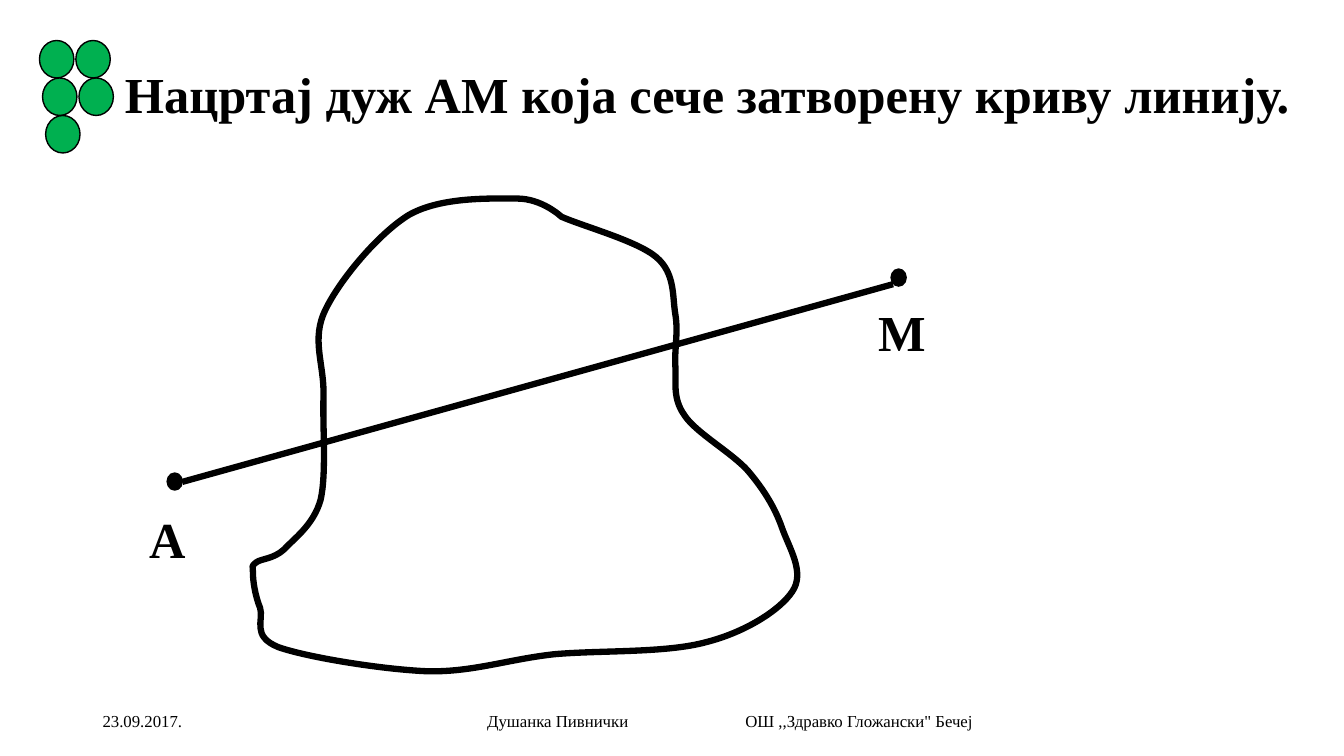
"""Build a geometry exercise slide: segment AM crossing a closed curve."""
from dataclasses import dataclass

from lxml.etree import SubElement
from pptx import Presentation
from pptx.dml.color import RGBColor
from pptx.enum.shapes import MSO_CONNECTOR, MSO_SHAPE
from pptx.enum.text import MSO_ANCHOR
from pptx.oxml.ns import qn
from pptx.util import Pt


@dataclass(frozen=True)
class Theme:
    font: str = "Times New Roman"
    ink: RGBColor = RGBColor(0, 0, 0)
    paper: RGBColor = RGBColor(255, 255, 255)
    green: RGBColor = RGBColor(0, 176, 80)
    large: int = 36
    small: int = 12
    thin: float = 1
    thick: float = 4.5


THEME = Theme()
SLIDE_SIZE = (960, 540)
TITLE = ("Нацртај дуж АМ која сече затворену криву линију.", (82.2, 17.3, 847.4, 104.7))
DATE = ("23.09.2017.", (66.2, 500.4, 216, 28.8))
FOOTER = ("Душанка Пивнички\tОШ ,,Здравко Гложански\" Бечеј", (318.2, 500.4, 407.5, 28.8))
FOOTER_INSET = 29.8
FOOTER_TAB = 184.4
POINT_LABELS = [("A", (99.5, 364.5, 50.4, 36)), ("М", (620.1, 216.2, 50.4, 36))]
POINT_CORNERS = [(119.4, 337.9), (636.5, 192.2)]
POINT_SIZE = (10.8, 12.2)
SEGMENT = (130.3, 344.2, 637.9, 203)

BALL_ROWS = (2, 2, 1)
BALL_ORIGIN = (28.2, 28.9)
BALL_SIZE = (24.6, 26.8)
BALL_STEP = 26
ROW_SHIFT = 2.2

CURVE_BOX = (180.2, 141.9, 389.5, 337.7)
CURVE_START = (182.9, 401.8)
CURVE_PIECES = [
    ((186.5, 398.9), (195.1, 399.6), (203, 392.4)),
    ((210.2, 384.5), (223.9, 375.1), (229, 357.1)),
    ((233.3, 338.4), (230.4, 305.3), (231.1, 283)),
    ((231.8, 259.9), (221.8, 242.6), (232.6, 221)),
    ((242.6, 200.2), (270, 167), (292.3, 153.4)),
    ((315.4, 140.4), (350.6, 141.8), (369.4, 141.8)),
    ((387.4, 141.8), (401, 154.8), (401, 154.8)),
    ((417.6, 162), (455, 172.1), (468.7, 183.6)),
    ((482.4, 195.1), (480.2, 211.7), (482.4, 224.6)),
    ((484.6, 237.6), (481.7, 249.1), (482.4, 261.4)),
    ((483.1, 272.9), (480.2, 284.4), (488.9, 296.6)),
    ((496.8, 308.9), (522.7, 323.3), (534.2, 336.2)),
    ((545.8, 349.9), (553.7, 362.9), (558.7, 377.3)),
    ((563.8, 391.7), (575.3, 409), (565.9, 422.6)),
    ((557.3, 435.6), (532.8, 451.4), (504.7, 458.6)),
    ((475.9, 466.6), (429.1, 464.4), (396, 467.3)),
    ((362.9, 470.9), (337.7, 480.2), (305.3, 479.5)),
    ((272.2, 478.1), (218.9, 469.4), (198.7, 462.2)),
    ((179.3, 454.3), (188.6, 442.8), (185.8, 434.2)),
    ((182.2, 425.5), (180.7, 414.7), (180.7, 409.7)),
    ((180.7, 403.9), (179.3, 404.6), (182.9, 401.8)),
]


def points(*lengths):
    return [Pt(length) for length in lengths]


def add_text(slide, text, box, size, bold=False, anchor=MSO_ANCHOR.MIDDLE):
    frame = slide.shapes.add_textbox(*points(*box)).text_frame
    frame.word_wrap = True
    frame.vertical_anchor = anchor
    paragraph = frame.paragraphs[0]
    paragraph.text = text
    paragraph.font.name = THEME.font
    paragraph.font.size = Pt(size)
    paragraph.font.bold = bold
    paragraph.font.color.rgb = THEME.ink
    return frame


def add_footer(slide):
    frame = add_text(slide, *FOOTER, THEME.small)
    frame.margin_left = Pt(FOOTER_INSET)
    properties = frame.paragraphs[0]._p.get_or_add_pPr()
    tab_list = properties.makeelement(qn("a:tabLst"))
    SubElement(tab_list, qn("a:tab"), pos=str(Pt(FOOTER_TAB)), algn="l")
    properties.insert(0, tab_list)


def style_shape(shape, fill, width):
    shape.shadow.inherit = False
    shape.fill.solid()
    shape.fill.fore_color.rgb = fill
    shape.line.color.rgb = THEME.ink
    shape.line.width = Pt(width)


def add_ellipse(slide, corner, size, fill):
    shape = slide.shapes.add_shape(MSO_SHAPE.OVAL, *points(*corner, *size))
    style_shape(shape, fill, THEME.thin)


def add_balls(slide):
    left, top = BALL_ORIGIN
    for row, count in enumerate(BALL_ROWS):
        for column in range(count):
            corner = (left + row * ROW_SHIFT + column * BALL_STEP, top + row * BALL_SIZE[1])
            add_ellipse(slide, corner, BALL_SIZE, THEME.green)


def add_curve_point(parent, position):
    x, y = (Pt(value - edge) for value, edge in zip(position, CURVE_BOX))
    SubElement(parent, qn("a:pt"), x=str(x), y=str(y))


def add_closed_curve(slide):
    builder = slide.shapes.build_freeform(*points(*CURVE_START))
    builder.add_line_segments([points(*piece[-1]) for piece in CURVE_PIECES], close=True)
    shape = builder.convert_to_shape()
    shape.left, shape.top, shape.width, shape.height = points(*CURVE_BOX)
    outline = next(shape._element.iter(qn("a:path")))
    for child in list(outline):
        outline.remove(child)
    outline.set("w", str(shape.width))
    outline.set("h", str(shape.height))
    add_curve_point(SubElement(outline, qn("a:moveTo")), CURVE_START)
    for piece in CURVE_PIECES:
        segment = SubElement(outline, qn("a:cubicBezTo"))
        for position in piece:
            add_curve_point(segment, position)
    SubElement(outline, qn("a:close"))
    style_shape(shape, THEME.paper, THEME.thick)


def add_segment(slide):
    connector = slide.shapes.add_connector(MSO_CONNECTOR.STRAIGHT, *points(*SEGMENT))
    connector.line.color.rgb = THEME.ink
    connector.line.width = Pt(THEME.thick)
    SubElement(connector._element.spPr, qn("a:effectLst"))


def main():
    presentation = Presentation()
    presentation.slide_width, presentation.slide_height = points(*SLIDE_SIZE)
    slide = presentation.slides.add_slide(presentation.slide_layouts[6])
    add_text(slide, *TITLE, THEME.large, bold=True).paragraphs[0].line_spacing = 0.9
    add_text(slide, *DATE, THEME.small)
    add_footer(slide)
    add_balls(slide)
    add_closed_curve(slide)
    for corner in POINT_CORNERS:
        add_ellipse(slide, corner, POINT_SIZE, THEME.ink)
    for text, box in POINT_LABELS:
        frame = add_text(slide, text, box, THEME.large, bold=True, anchor=MSO_ANCHOR.TOP)
        frame.paragraphs[0].line_spacing = 0.9
        frame.paragraphs[0].space_before = Pt(10)
    add_segment(slide)
    presentation.save("out.pptx")


if __name__ == "__main__":
    main()
